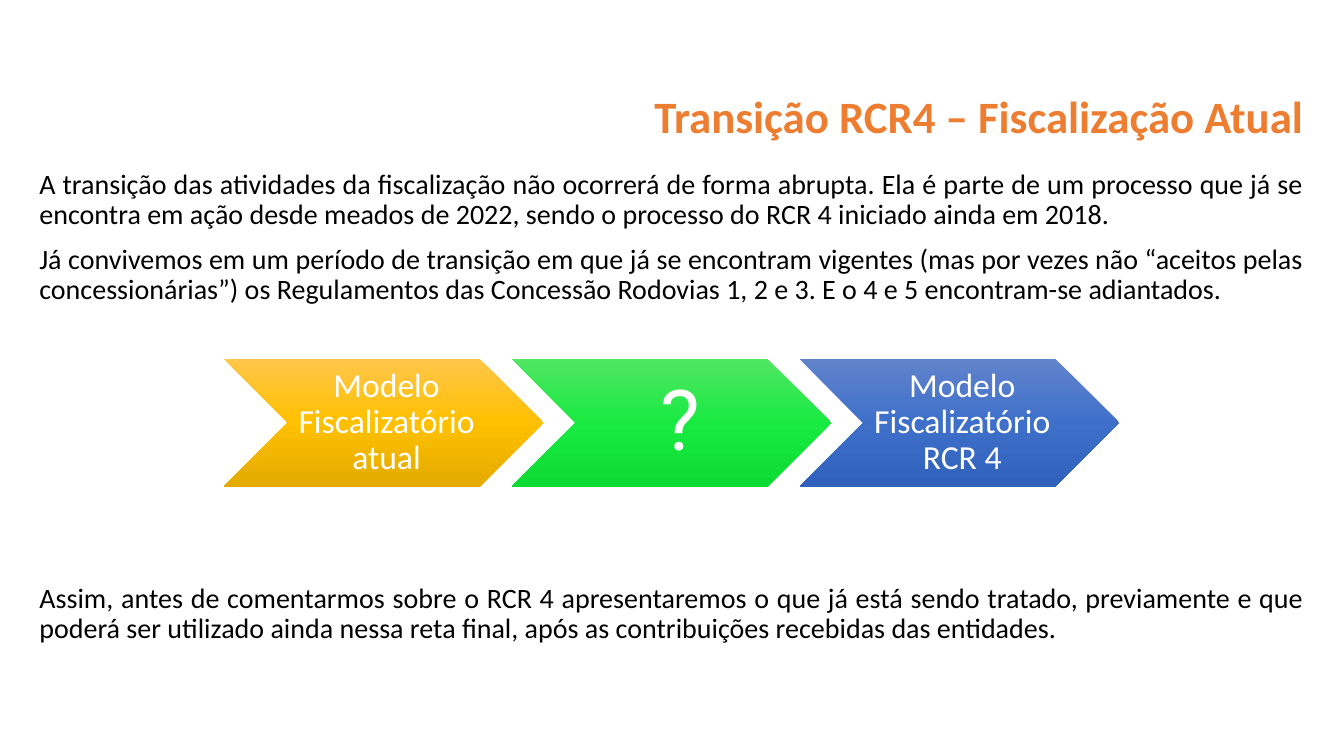
from copy import deepcopy

from pptx import Presentation
from pptx import util as u
from pptx.dml.color import RGBColor
from pptx.enum import shapes, text
from pptx.oxml.ns import qn

IN = u.Inches
LEFT, WIDE = 0.29, 12.74

INTRO = [
    "A transição das atividades da fiscalização não ocorrerá de forma abrupta. "
    "Ela é parte de um processo que já se encontra em ação desde meados de 2022, "
    "sendo o processo do RCR 4 iniciado ainda em 2018.",
    "Já convivemos em um período de transição em que já se encontram vigentes "
    "(mas por vezes não “aceitos pelas concessionárias”) os Regulamentos das "
    "Concessão Rodovias 1, 2 e 3. E o 4 e 5 encontram-se adiantados.",
]
CLOSE = ("Assim, antes de comentarmos sobre o RCR 4 apresentaremos o que já está "
         "sendo tratado, previamente e que poderá ser utilizado ainda nessa reta "
         "final, após as contribuições recebidas das entidades.")

# Label, font, size, left inset, other insets, gradient from top to bottom
STEPS = [
    ("Modelo Fiscalizatório atual", "Calibri", 24, 0.1, 0.04,
     ("FFC64B", "FFC000", "E3AB00")),
    ("?", "Roboto", 60, 0.26, 0.09, ("51E663", "19EA42", "0CDB34")),
    ("Modelo Fiscalizatório RCR 4", "Calibri", 24, 0.1, 0.04,
     ("6183CB", "3E70CA", "3062BB")),
]


def tint(target, code):
    target.rgb = RGBColor.from_string(code)


def place(shape, box):
    shape.left, shape.top, shape.width, shape.height = map(IN, box)


def write(par, words, size, code, align, face="Calibri", bold=False):
    par.alignment = align
    par.line_spacing = 0.9
    run = par.add_run()
    run.text = words
    font = run.font
    font.name, font.size, font.bold = face, u.Pt(size), bold
    tint(font.color, code)


def shade(shape, codes):
    """Fill from top to bottom with evenly spaced colours."""
    fill = shape.fill
    fill.gradient()
    fill.gradient_angle = 270
    stops = fill.gradient_stops
    stop_list = shape._element.spPr.find(".//" + qn("a:gsLst"))
    stop_list.insert(1, deepcopy(stop_list[0]))
    stops = fill.gradient_stops
    for i, (stop, code) in enumerate(zip(stops, codes)):
        stop.position = i / (len(codes) - 1)
        tint(stop.color, code)


def heading(slide, box):
    title = slide.shapes.title
    place(title, box)
    frame = title.text_frame
    frame.auto_size = text.MSO_AUTO_SIZE.NONE
    frame.vertical_anchor = text.MSO_ANCHOR.MIDDLE
    write(frame.paragraphs[0], "Transição RCR4 – Fiscalização Atual", 32,
          "ED7D31", text.PP_ALIGN.RIGHT, bold=True)


def prose(slide, box):
    body = slide.placeholders[1]
    place(body, box)
    frame = body.text_frame
    frame.auto_size = text.MSO_AUTO_SIZE.NONE
    # The wide gap before the last paragraph leaves room for the chevrons
    for i, (words, gap) in enumerate(zip(INTRO + [CLOSE], (0, 10, 199))):
        par = frame.add_paragraph() if i else frame.paragraphs[0]
        props = par._p.get_or_add_pPr()
        props.set("marL", "0")
        props.set("indent", "0")
        props.append(props.makeelement(qn("a:buNone"), {}))
        par.space_before = u.Pt(gap)
        write(par, words, 20, "000000", text.PP_ALIGN.JUSTIFY)


def flow(slide, box):
    left, top, width, height = box
    wide = 3.17
    pitch = (width - wide) / (len(STEPS) - 1)
    for i, (label, face, size, inset, edge, codes) in enumerate(STEPS):
        step = slide.shapes.add_shape(
            shapes.MSO_SHAPE.CHEVRON, IN(left + i * pitch), IN(top),
            IN(wide), IN(height))
        step.shadow.inherit = False
        step.line.fill.background()
        shade(step, codes)
        frame = step.text_frame
        frame.word_wrap = True
        frame.vertical_anchor = text.MSO_ANCHOR.MIDDLE
        frame.margin_left = IN(inset)
        frame.margin_top = frame.margin_right = frame.margin_bottom = IN(edge)
        write(frame.paragraphs[0], label, size, "FFFFFF",
              text.PP_ALIGN.CENTER, face)


def main():
    deck = Presentation()
    deck.slide_width, deck.slide_height = IN(13.33), IN(7.5)
    slide = deck.slides.add_slide(deck.slide_layouts[1])
    heading(slide, (LEFT, 0.83, WIDE, 0.7))
    prose(slide, (LEFT, 1.64, WIDE, 5.12))
    flow(slide, (2.22, 3.56, 8.88, 1.27))
    deck.save("out.pptx")


if __name__ == "__main__":
    main()
